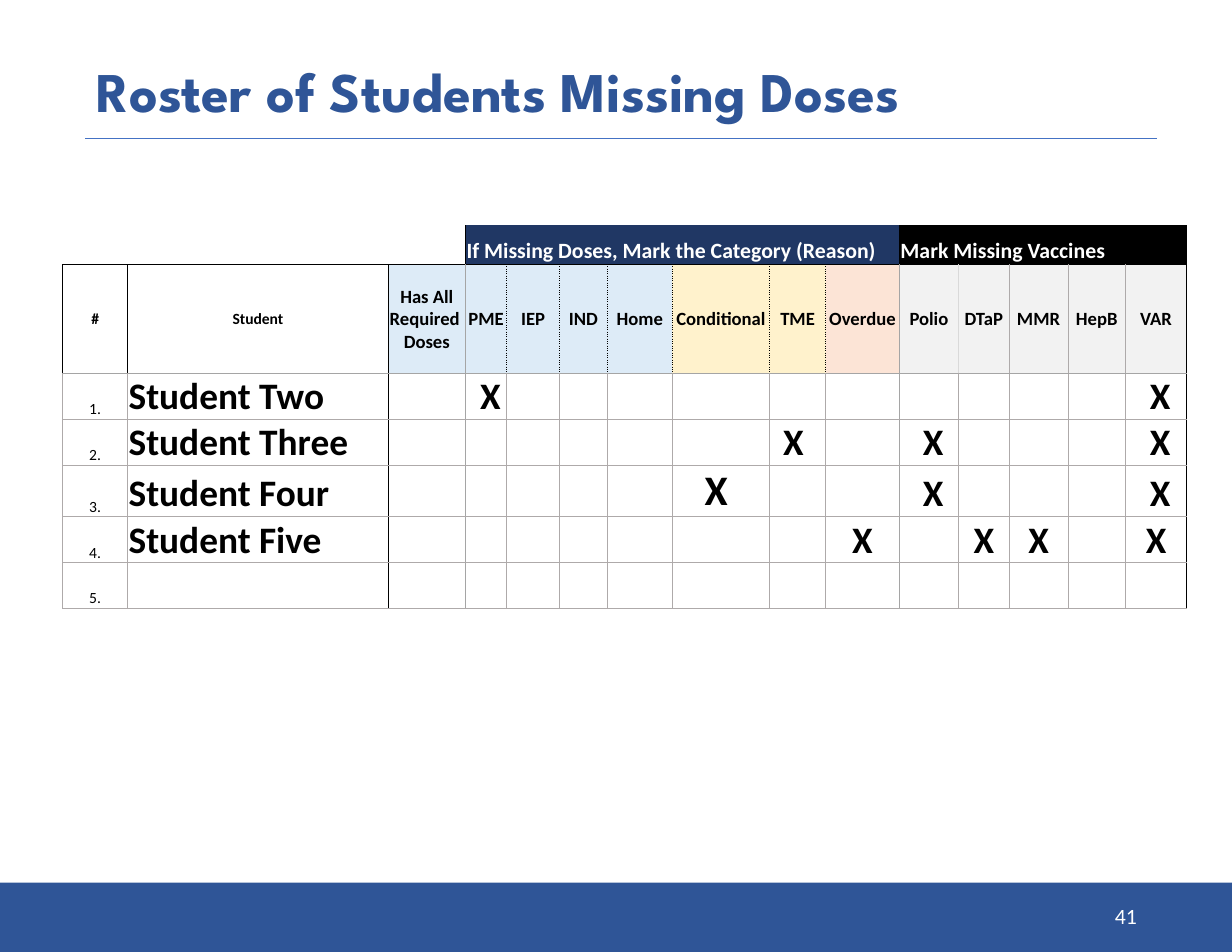
from dataclasses import dataclass

from lxml import etree
from pptx import Presentation
from pptx.dml.color import RGBColor
from pptx.enum.shapes import MSO_CONNECTOR, MSO_SHAPE
from pptx.enum.text import MSO_ANCHOR, PP_ALIGN
from pptx.oxml.ns import qn
from pptx.util import Inches, Pt

LEFT, CENTER, RIGHT = PP_ALIGN.LEFT, PP_ALIGN.CENTER, PP_ALIGN.RIGHT
MIDDLE, BOTTOM = MSO_ANCHOR.MIDDLE, MSO_ANCHOR.BOTTOM
RECTANGLE, STRAIGHT = MSO_SHAPE.RECTANGLE, MSO_CONNECTOR.STRAIGHT
PAGE_WIDTH, PAGE_HEIGHT = Inches(11), Inches(8.5)
GRID_COLUMNS = 110
UNIT = PAGE_WIDTH / GRID_COLUMNS
NO_GRID_STYLE = "{2D5ABB26-0587-4C30-8999-92F81FD0307C}"
HARD_SPACE = chr(160)


@dataclass(frozen=True)
class Theme:
    """Colours, fonts and type sizes of the deck."""
    blue: str = "2F5597"
    rule: str = "4472C4"
    navy: str = "203764"
    black: str = "000000"
    white: str = "FFFFFF"
    sky: str = "DDEBF7"
    sand: str = "FFF2CC"
    peach: str = "FCE4D6"
    mist: str = "F2F2F2"
    grid: str = "AEAAAA"
    divider: str = "A5A5A5"
    pale: str = "D9D9D9"
    heading_font: str = "League Spartan"
    body_font: str = "Calibri"
    title: int = 36
    large_mark: int = 27
    entry: int = 24
    band: int = 14
    header: int = 12
    small: int = 10


@dataclass(frozen=True)
class Box:
    """A rectangle measured in grid columns and rows."""
    left: float
    top: float
    width: float
    height: float

    def lengths(self):
        """Return left, top, width and height as slide lengths."""
        return [round(side * UNIT) for side in (self.left, self.top, self.width, self.height)]


THEME = Theme()
SOLID = (THEME.black, 1, "solid")
THIN = (THEME.black, 0.5, "solid")
DOTTED = (THEME.black, 0.5, "sysDot")
GRID = (THEME.grid, 0.5, "solid")
DIVIDER = (THEME.divider, 0.5, "solid")
PALE = (THEME.pale, 0.5, "solid")

COLUMN_SHARES = [58, 233, 69, 37, 47, 43, 58, 87, 50, 66, 53, 45, 53, 51, 55]
ROW_SHARES = [34, 93] + [39] * 5
BANDS = [(3, 9, "If Missing Doses, Mark the Category (Reason)", THEME.navy),
         (10, 13, "Mark Missing Vaccines", THEME.black)]
HEADERS = ["#", "Student", f"Has All Required{HARD_SPACE} Doses", "PME", "IEP", "IND", "Home",
           "Conditional", "TME", "Overdue", "Polio", "DTaP", "MMR", "HepB", "VAR"]
HEADER_FILLS = ([None] * 2 + [THEME.sky] * 5 + [THEME.sand] * 2
                + [THEME.peach] + [THEME.mist] * 5)
MARK, MARK_RIGHT, MARK_LEFT = "X", HARD_SPACE + "X", "X" + HARD_SPACE
STUDENTS = [("Student Two" + HARD_SPACE, {3: MARK_RIGHT, 14: MARK_RIGHT}),
            ("Student Three" + HARD_SPACE, {8: MARK_LEFT, 10: MARK_RIGHT, 14: MARK_RIGHT}),
            ("Student Four", {7: MARK_LEFT, 10: MARK_RIGHT, 14: MARK_RIGHT}),
            ("Student Five", {9: MARK, 11: MARK, 12: MARK, 14: MARK}),
            ("", {})]
LARGE_MARK_CELL = (4, 7)


def write(frame, text, size, color, bold=False, align=LEFT, font=THEME.body_font):
    """Put one formatted paragraph into a text frame."""
    para = frame.paragraphs[0]
    para.text = text
    para.alignment = align
    for span in para.runs:
        span.font.name, span.font.size, span.font.bold = font, Pt(size), bold
        span.font.color.rgb = RGBColor.from_string(color)
    return para


def add_text(page, box, text, size, color, **style):
    """Add a wrapped, vertically centred text box."""
    frame = page.shapes.add_textbox(*box.lengths()).text_frame
    frame.word_wrap = True
    frame.vertical_anchor = MIDDLE
    return write(frame, text, size, color, **style)


def add_heading(page, box):
    """Place the title with a rule along the bottom of its box."""
    para = add_text(page, box, "Roster of Students Missing Doses", THEME.title, THEME.blue,
                    bold=True, font=THEME.heading_font)
    para.line_spacing = 0.9
    left, top, width, height = box.lengths()
    rule = page.shapes.add_connector(STRAIGHT, left, top + height,
                                     left + width + round(0.8 * UNIT), top + height)
    rule.line.color.rgb = RGBColor.from_string(THEME.rule)
    rule.line.width = Pt(0.75)
    etree.SubElement(rule._element.spPr, qn("a:effectLst"))


def add_footer(page, box):
    """Place the colour band and the page number within it."""
    band = page.shapes.add_shape(RECTANGLE, *box.lengths())
    band.shadow.inherit = False
    band.fill.solid()
    band.fill.fore_color.rgb = RGBColor.from_string(THEME.blue)
    band.line.fill.background()
    number = Box(box.left + 77.7, box.top + 0.7, 24.8, 4.5)
    add_text(page, number, "41", THEME.band, THEME.white, align=RIGHT)


def vertical_border(row, edge):
    """Return the border at a column edge of a row."""
    if row == 0:
        return SOLID if edge in (3, 10, 15) else None
    if row == 1:
        if 4 <= edge <= 9:
            return DOTTED
        special = {0: SOLID, 1: THIN, 11: PALE}
        if edge in special:
            return special[edge]
    if edge in (2, 15):
        return SOLID
    return DIVIDER if edge in (3, 10) else GRID


def horizontal_border(edge):
    """Return the border at a row edge."""
    return {0: None, 1: SOLID, 2: DIVIDER}.get(edge, GRID)


def draw_borders(cell, row, column):
    """Draw the four borders of a cell."""
    end = column + max(cell.span_width, 1)
    borders = {"a:lnL": vertical_border(row, column), "a:lnR": vertical_border(row, end),
               "a:lnT": horizontal_border(row), "a:lnB": horizontal_border(row + 1)}
    properties = cell._tc.get_or_add_tcPr()
    for tag, border in borders.items():
        if border:
            color, width, dash = border
            line = etree.SubElement(properties, qn(tag), w=str(Pt(width)))
            fill = etree.SubElement(line, qn("a:solidFill"))
            etree.SubElement(fill, qn("a:srgbClr"), val=color)
            etree.SubElement(line, qn("a:prstDash"), val=dash)


def format_cell(cell, row, column, fill):
    """Set the margins, borders, anchor and fill of a cell."""
    cell.margin_left = cell.margin_right = cell.margin_top = Inches(0.01)
    cell.margin_bottom = 0
    cell.vertical_anchor = MIDDLE if row == 1 else BOTTOM
    draw_borders(cell, row, column)
    if fill:
        cell.fill.solid()
        cell.fill.fore_color.rgb = RGBColor.from_string(fill)
    else:
        cell.fill.background()


def add_roster(page, box):
    """Place the table of students and their missing doses."""
    frame = page.shapes.add_table(len(ROW_SHARES), len(COLUMN_SHARES), *box.lengths())
    table = frame.table
    table.first_row = table.horz_banding = False
    table._tbl.tblPr.find(qn("a:tableStyleId")).text = NO_GRID_STYLE
    width, height = box.lengths()[2:]
    for column, share in zip(table.columns, COLUMN_SHARES):
        column.width = round(width * share / sum(COLUMN_SHARES))
    for row, share in zip(table.rows, ROW_SHARES):
        row.height = round(height * share / sum(ROW_SHARES))
    band_fills = [None] * 3 + [THEME.navy] * 7 + [THEME.black] * 5
    for first, last, label, color in BANDS:
        table.cell(0, first).merge(table.cell(0, last))
        write(table.cell(0, first).text_frame, label, THEME.band, THEME.white, bold=True)
    for row in range(len(ROW_SHARES)):
        fills = {0: band_fills, 1: HEADER_FILLS}.get(row, [None] * len(COLUMN_SHARES))
        for column, fill in enumerate(fills):
            format_cell(table.cell(row, column), row, column, fill)
    for column, label in enumerate(HEADERS):
        size = THEME.small if column < 2 else THEME.header
        write(table.cell(1, column).text_frame, label, size, THEME.black, True, CENTER)
    for row, (student, marks) in enumerate(STUDENTS, start=2):
        write(table.cell(row, 0).text_frame, f"{row - 1}.", THEME.small, THEME.black, align=CENTER)
        write(table.cell(row, 1).text_frame, student, THEME.entry, THEME.black, True)
        for column, mark in marks.items():
            size = THEME.large_mark if (row, column) == LARGE_MARK_CELL else THEME.entry
            write(table.cell(row, column).text_frame, mark, size, THEME.black, True, CENTER)


def main():
    """Build the deck and save it."""
    deck = Presentation()
    deck.slide_width, deck.slide_height = PAGE_WIDTH, PAGE_HEIGHT
    page = deck.slides.add_slide(deck.slide_layouts[6])
    add_heading(page, Box(7.6, 4.5, 94.9, 7.9))
    add_roster(page, Box(5.6, 20.1, 100.4, 33.5))
    add_footer(page, Box(0, 78.8, GRID_COLUMNS, 6.2))
    deck.save("out.pptx")


if __name__ == "__main__":
    main()
